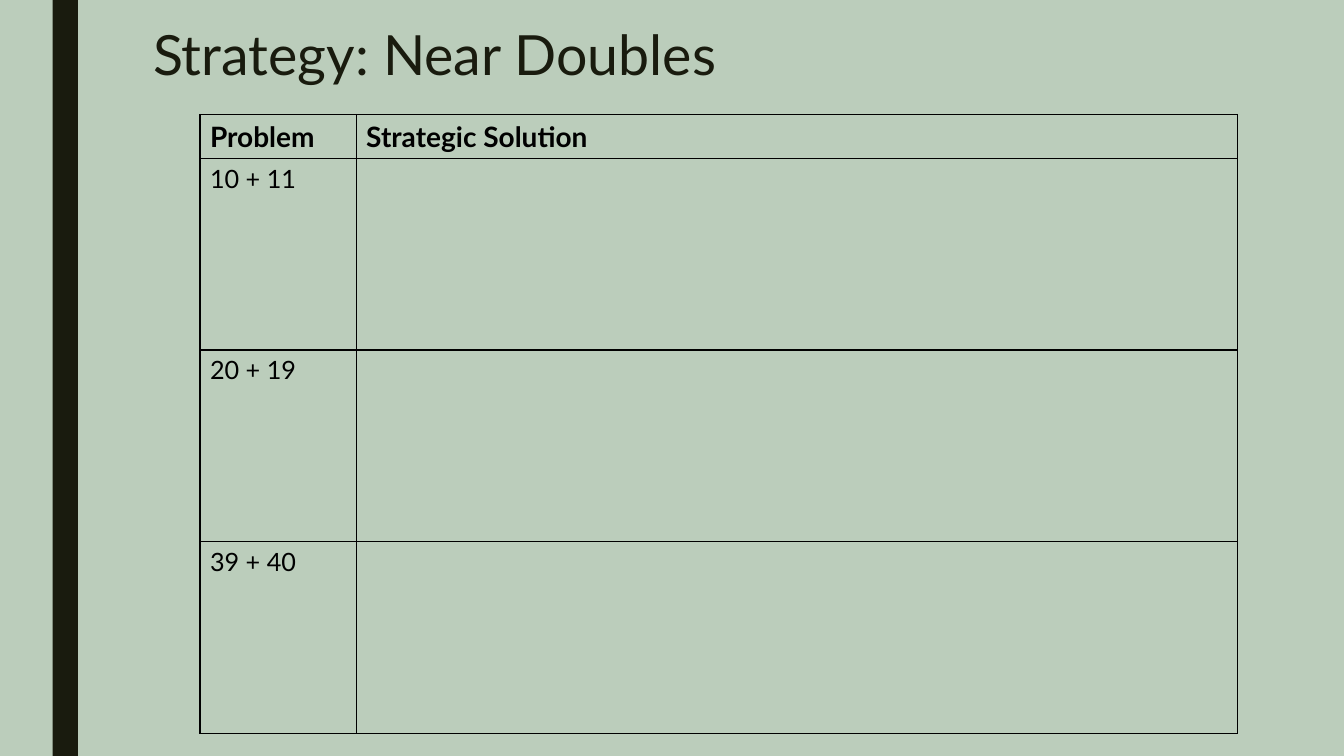
"""Build a worksheet slide for the near doubles addition strategy."""
from dataclasses import dataclass

from lxml.etree import SubElement
from pptx import Presentation
from pptx.dml.color import RGBColor as Rgb
from pptx.enum.shapes import MSO_SHAPE as Shape
from pptx.enum.text import MSO_ANCHOR as Anchor, PP_ALIGN as Align
from pptx.oxml.ns import qn
from pptx.util import Pt


@dataclass(frozen=True)
class Theme:
    """Colours, font and type sizes of the slide."""
    background: str = "BBCDBB"
    dark: str = "191B0E"
    ink: str = "000000"
    font: str = "Lato"
    title_size: float = 39.6
    header_size: float = 20
    body_size: float = 18
    border_width: float = 1


THEME = Theme()
HEADERS = ("Problem", "Strategic Solution")
PROBLEMS = ("10 + 11", "20 + 19", "39 + 40")
COLUMN_WIDTHS = (111.6, 629.3)
HEADER_HEIGHT = 31.4
PROBLEM_HEIGHT = 136.9


def write(frame, text, *, size, color=THEME.ink, bold=False, spacing=None):
    """Put one formatted paragraph into a text frame."""
    paragraph = frame.paragraphs[0]
    paragraph.alignment = Align.LEFT
    if spacing:
        paragraph.line_spacing = spacing
    run = paragraph.add_run()
    run.text = text
    run.font.name = THEME.font
    run.font.size = Pt(size)
    run.font.bold = bold
    run.font.color.rgb = Rgb.from_string(color)


def add_side_bar(slide, height):
    """Draw the dark band down the left side."""
    bar = slide.shapes.add_shape(Shape.RECTANGLE, Pt(37.6), 0, Pt(18), height)
    bar.shadow.inherit = False
    bar.fill.solid()
    bar.fill.fore_color.rgb = Rgb.from_string(THEME.dark)
    bar.line.fill.background()


def set_title(slide, text):
    """Move the title placeholder into place and fill it."""
    title = slide.shapes.title
    title.left, title.top = Pt(102.2), Pt(16.6)
    title.width, title.height = Pt(756), Pt(54)
    title.text_frame.word_wrap = True
    title.text_frame.vertical_anchor = Anchor.TOP
    write(title.text_frame, text, size=THEME.title_size, color=THEME.dark, spacing=0.89)


def outline(cell):
    """Give a cell thin borders on all sides and no fill."""
    properties = cell._tc.get_or_add_tcPr()
    for side in ("a:lnL", "a:lnR", "a:lnT", "a:lnB"):
        border = SubElement(properties, qn(side), w=str(Pt(THEME.border_width)))
        fill = SubElement(border, qn("a:solidFill"))
        SubElement(fill, qn("a:srgbClr"), val=THEME.ink)
    cell.fill.background()


def add_problem_table(slide):
    """Add the problems with room to write each solution."""
    heights = (HEADER_HEIGHT,) + (PROBLEM_HEIGHT,) * len(PROBLEMS)
    table = slide.shapes.add_table(
        len(heights), len(HEADERS), Pt(142.8), Pt(81.7),
        Pt(sum(COLUMN_WIDTHS)), Pt(sum(heights))).table
    table.first_row = table.horz_banding = False
    for column, width in zip(table.columns, COLUMN_WIDTHS):
        column.width = Pt(width)
    for row, height in zip(table.rows, heights):
        row.height = Pt(height)
    for cell in table.iter_cells():
        outline(cell)
    for index, header in enumerate(HEADERS):
        write(table.cell(0, index).text_frame, header, size=THEME.header_size, bold=True)
    for index, problem in enumerate(PROBLEMS, start=1):
        write(table.cell(index, 0).text_frame, problem, size=THEME.body_size)


def main():
    """Build the slide and save it."""
    deck = Presentation()
    deck.slide_width, deck.slide_height = Pt(960), Pt(540)
    slide = deck.slides.add_slide(deck.slide_layouts.get_by_name("Title Only"))
    slide.background.fill.solid()
    slide.background.fill.fore_color.rgb = Rgb.from_string(THEME.background)
    add_side_bar(slide, deck.slide_height)
    set_title(slide, "Strategy: Near Doubles")
    add_problem_table(slide)
    deck.save("out.pptx")


if __name__ == "__main__":
    main()
